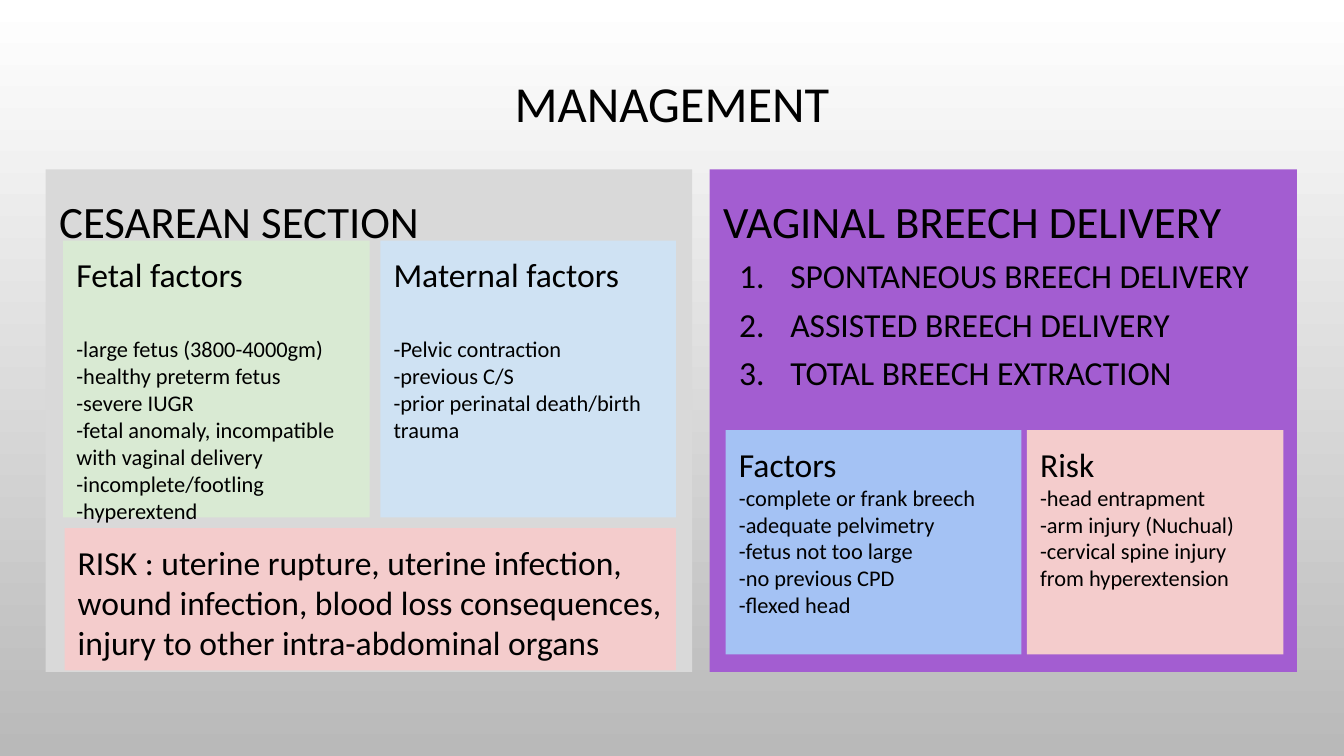
from dataclasses import dataclass

import pptx
import pptx.dml.color
import pptx.enum.shapes
import pptx.enum.text
import pptx.oxml.ns
import pptx.util
from lxml import etree

Inches = pptx.util.Inches
Pt = pptx.util.Pt
ALIGN = pptx.enum.text.PP_ALIGN
FRAME = {
    "margin_left": Inches(0.1), "margin_right": Inches(0.1),
    "margin_top": Inches(0.1), "margin_bottom": Inches(0.1),
    "word_wrap": True,
    "auto_size": pptx.enum.text.MSO_AUTO_SIZE.NONE,
    "vertical_anchor": pptx.enum.text.MSO_ANCHOR.TOP,
}


@dataclass
class Box:
    left: float
    top: float
    width: float
    height: float
    fill: str | None = None


@dataclass
class Card:
    box: Box
    heading: str
    items: tuple[str, ...] = ()
    gap: float = 0  # points between heading and items


def rgb(color: str) -> pptx.dml.color.RGBColor:
    return pptx.dml.color.RGBColor.from_string(color)


def apply(obj, values: dict) -> None:
    for name, value in values.items():
        setattr(obj, name, value)


def place(sp, box: Box) -> None:
    apply(sp, {"left": Inches(box.left), "top": Inches(box.top),
               "width": Inches(box.width), "height": Inches(box.height)})
    if box.fill:
        sp.fill.solid()
        sp.fill.fore_color.rgb = rgb(box.fill)
    apply(sp.text_frame, FRAME)


def add_text(tf, text: str, size: float, first: bool = False,
             numbered: bool = False, spacing: float = 1.0, before: float = 0,
             align=ALIGN.LEFT) -> None:
    p = tf.paragraphs[0] if first else tf.add_paragraph()
    pPr = p._p.get_or_add_pPr()
    pPr.set("marL", str(Inches(0.5 if numbered else 0)))
    pPr.set("indent", str(Inches(-0.38 if numbered else 0)))
    qn = pptx.oxml.ns.qn
    if numbered:
        etree.SubElement(pPr, qn("a:buFont")).set("typeface", "Calibri")
        etree.SubElement(pPr, qn("a:buAutoNum")).set("type", "arabicPeriod")
    else:
        etree.SubElement(pPr, qn("a:buNone"))
    apply(p, {"alignment": align, "line_spacing": spacing,
              "space_before": Pt(before), "space_after": Pt(0)})
    r = p.add_run()
    r.text = text
    apply(r.font, {"name": "Calibri", "size": Pt(size)})
    r.font.color.rgb = rgb("000000")


def add_card(slide, card: Card) -> None:
    b = card.box
    sp = slide.shapes.add_shape(
        pptx.enum.shapes.MSO_SHAPE.RECTANGLE, Inches(b.left), Inches(b.top),
        Inches(b.width), Inches(b.height))
    place(sp, b)
    sp.line.fill.background()
    sp.shadow.inherit = False
    add_text(sp.text_frame, card.heading, 18, first=True)
    for i, item in enumerate(card.items):
        add_text(sp.text_frame, item, 12, before=0 if i else card.gap)


def add_panel(sp, panel: Card) -> None:
    place(sp, panel.box)
    add_text(sp.text_frame, panel.heading, 24, first=True, spacing=1.2)
    for item in panel.items:
        add_text(sp.text_frame, item, 18, numbered=True, spacing=1.2)


PANELS = (
    Card(Box(0.34, 1.26, 4.81, 3.74, "D9D9D9"), "CESAREAN SECTION"),
    Card(Box(5.28, 1.26, 4.37, 3.74, "A35DD1"), "VAGINAL BREECH DELIVERY",
         ("SPONTANEOUS BREECH DELIVERY", "ASSISTED BREECH DELIVERY",
          "TOTAL BREECH EXTRACTION")),
)
CARDS = (
    Card(Box(0.47, 1.79, 2.28, 2.06, "D9EAD3"), "Fetal factors",
         ("-large fetus (3800-4000gm)", "-healthy preterm fetus",
          "-severe IUGR",
          "-fetal anomaly, incompatible with vaginal delivery",
          "-incomplete/footling", "-hyperextend"), gap=22),
    Card(Box(2.83, 1.79, 2.2, 2.06, "CFE2F3"), "Maternal factors",
         ("-Pelvic contraction", "-previous C/S",
          "-prior perinatal death/birth trauma"), gap=22),
    Card(Box(5.4, 3.2, 2.2, 1.67, "A4C2F4"), "Factors",
         ("-complete or frank breech", "-adequate pelvimetry",
          "-fetus not too large", "-no previous CPD", "-flexed head")),
    Card(Box(7.64, 3.2, 1.91, 1.67, "F4CCCC"), "Risk",
         ("-head entrapment", "-arm injury (Nuchual)",
          "-cervical spine injury from hyperextension")),
    Card(Box(0.48, 3.93, 4.55, 1.06, "F4CCCC"),
         "RISK : uterine rupture, uterine infection, wound infection, "
         "blood loss consequences, injury to other intra-abdominal organs"),
)


def main() -> None:
    # Widescreen 16:9 slide
    prs = pptx.Presentation()
    apply(prs, {"slide_width": Inches(10), "slide_height": Inches(10 * 9 / 16)})
    s = prs.slides.add_slide(prs.slide_layouts.get_by_name("Two Content"))

    # Background fading downwards
    fill = s.background.fill
    fill.gradient()
    fill.gradient_angle = 270
    for stop, color in zip(fill.gradient_stops, ("FFFFFF", "B9B9B9")):
        stop.color.rgb = rgb(color)

    # Title
    place(s.shapes.title, Box(0.34, 0.49, 9.32, 0.63))
    add_text(s.shapes.title.text_frame, "MANAGEMENT", 27, first=True,
             spacing=0.9, align=ALIGN.CENTER)

    # Delivery panels, then the cards on top of them
    for idx, panel in enumerate(PANELS, start=1):
        add_panel(s.placeholders[idx], panel)
    for card in CARDS:
        add_card(s, card)

    prs.save("out.pptx")


if __name__ == "__main__":
    main()
